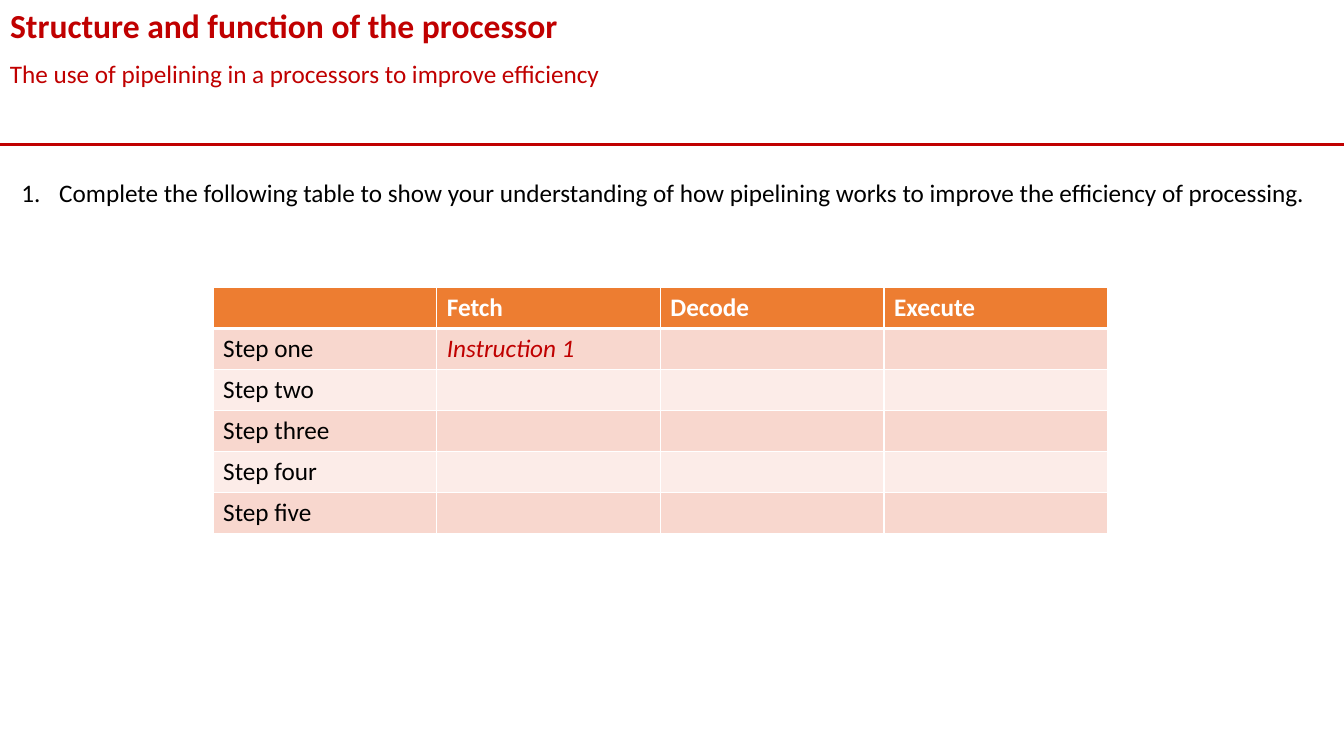
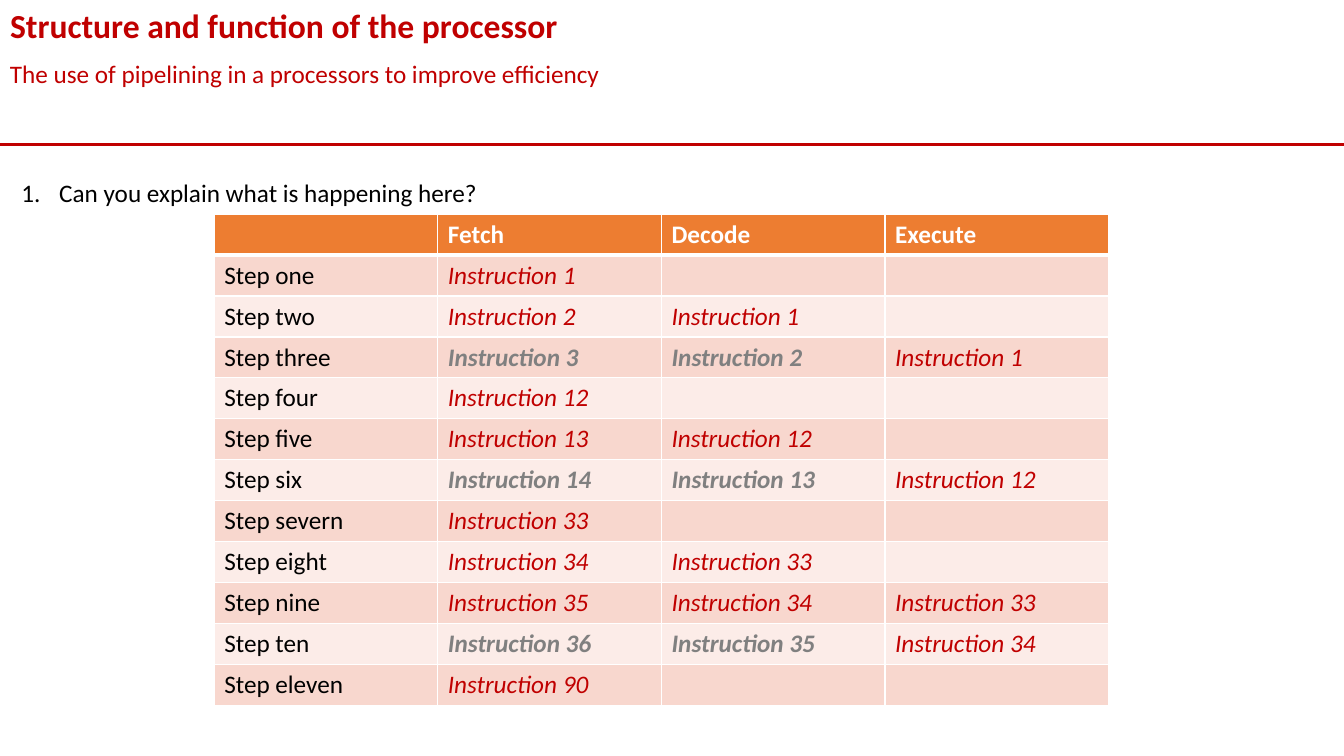
from lxml import etree
from pptx import Presentation
from pptx.dml.color import RGBColor
from pptx.enum.shapes import MSO_CONNECTOR
from pptx.enum.text import MSO_ANCHOR, PP_ALIGN
from pptx.oxml.ns import qn
from pptx.util import Pt

PX = 9525  # EMU per px, 96 px to the inch
WIDTH, HEIGHT = 1280, 720
STRAIGHT = MSO_CONNECTOR.STRAIGHT
TOP = MSO_ANCHOR.TOP
LEFT = PP_ALIGN.LEFT

RED, BLACK, WHITE, GREY = "C00000", "000000", "FFFFFF", "808080"
ORANGE = "ED7D31"
BANDS = ("F8D7CE", "FCECE8")

TITLE = "Structure and function of the processor"
SUBTITLE = "The use of pipelining in a processors to improve efficiency"
HEADERS = ("", "Fetch", "Decode", "Execute")


def px(*lengths):
    return [length * PX for length in lengths]


def rgb(value):
    return RGBColor.from_string(value)


def write(tf, text, size=18, color=BLACK, bold=False, italic=False):
    p = tf.paragraphs[0]
    p.alignment = LEFT
    if text:
        r = p.add_run()
        r.text = text
        font = r.font
        font.name, font.size = "Calibri", Pt(size)
        font.bold, font.italic = bold, italic
        font.color.rgb = rgb(color)
    return p


def set_borders(cell, **widths):
    """Draw white borders; the keywords L, R, T and B change the width in points."""
    tcPr = cell._tc.get_or_add_tcPr()
    for side in "LRTB":
        ln = etree.SubElement(tcPr, qn(f"a:ln{side}"), w=str(Pt(widths.get(side, 1))))
        fill = etree.SubElement(ln, qn("a:solidFill"))
        etree.SubElement(fill, qn("a:srgbClr"), val=WHITE)


class Deck:
    def __init__(self):
        self.prs = Presentation()
        self.prs.slide_width, self.prs.slide_height = px(WIDTH, HEIGHT)
        self.s = None

    def add_slide(self):
        self.s = self.prs.slides.add_slide(self.prs.slide_layouts[5])
        self.rule(138)
        self.text(SUBTITLE, 0, 51, WIDTH, 38, color=RED)
        self.title(TITLE)

    def title(self, text):
        sp = self.s.shapes.title
        sp.left, sp.top, sp.width, sp.height = px(0, 0, WIDTH, 48)
        sp.text_frame.vertical_anchor = TOP
        write(sp.text_frame, text, size=24, color=RED, bold=True)

    def rule(self, y):
        line = self.s.shapes.add_connector(STRAIGHT, *px(0, y, WIDTH, y))
        line.line.color.rgb = rgb(RED)
        line.line.width = Pt(2.25)
        etree.SubElement(line._element.spPr, qn("a:effectLst"))

    def text(self, text, x, y, w, h, **style):
        tf = self.s.shapes.add_textbox(*px(x, y, w, h)).text_frame
        tf.word_wrap = True
        return write(tf, text, **style)

    def question(self, text):
        p = self.text(text, 11, 164, 1269, 68)
        pPr = p._p.get_or_add_pPr()
        indent = 36 * PX
        pPr.set("marL", str(indent))
        pPr.set("indent", str(-indent))
        etree.SubElement(pPr, qn("a:buFont"), typeface="+mj-lt")
        etree.SubElement(pPr, qn("a:buAutoNum"), type="arabicPeriod")

    def cell(self, cell, text, fill, borders, **style):
        set_borders(cell, **borders)
        cell.fill.solid()
        cell.fill.fore_color.rgb = rgb(fill)
        write(cell.text_frame, text, **style)

    def pipeline_table(self, x, y, steps, discarded=()):
        """Fill one row per step; discarded steps show fetch and decode in grey."""
        rows, cols = len(steps) + 1, len(HEADERS)
        col_w, row_h = 213, 39
        frame = self.s.shapes.add_table(rows, cols, *px(x, y, cols * col_w, rows * row_h))
        table = frame.table
        table.horz_banding = False
        for col in table.columns:
            col.width = col_w * PX
        for row in table.rows:
            row.height = row_h * PX

        for c, header in enumerate(HEADERS):
            self.cell(table.cell(0, c), header, ORANGE, {"B": 3}, color=WHITE, bold=True)

        for r, (name, *instructions) in enumerate(steps, 1):
            fill = BANDS[(r - 1) % 2]
            borders = {"T": 3} if r == 1 else {}
            self.cell(table.cell(r, 0), f"Step {name}", fill, borders)
            for c in range(1, cols):
                text = f"Instruction {instructions[c - 1]}" if c <= len(instructions) else ""
                grey = name in discarded and c < 3
                self.cell(table.cell(r, c), text, fill, borders,
                          color=GREY if grey else RED, bold=grey, italic=True)


def main():
    deck = Deck()

    # Table to complete
    deck.add_slide()
    deck.question("Complete the following table to show your understanding of how "
                  "pipelining works to improve the efficiency of processing.")
    deck.pipeline_table(203, 274, [("one", 1), ("two",), ("three",), ("four",), ("five",)])

    # Pipeline with discarded instructions
    deck.add_slide()
    deck.question("Can you explain what is happening here?")
    steps = [
        ("one", 1),
        ("two", 2, 1),
        ("three", 3, 2, 1),
        ("four", 12),
        ("five", 13, 12),
        ("six", 14, 13, 12),
        ("severn", 33),
        ("eight", 34, 33),
        ("nine", 35, 34, 33),
        ("ten", 36, 35, 34),
        ("eleven", 90),
    ]
    deck.pipeline_table(204, 204, steps, discarded=("three", "six", "ten"))

    deck.prs.save("out.pptx")


if __name__ == "__main__":
    main()
